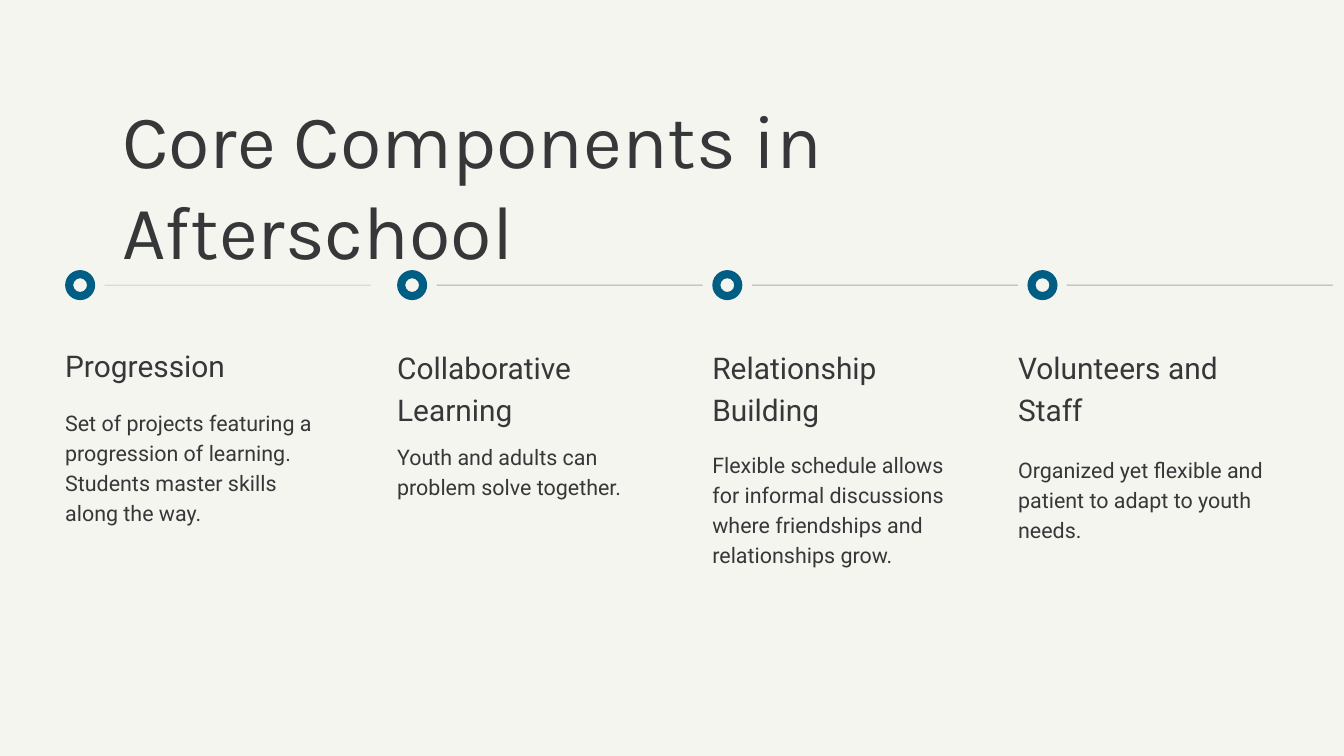
from lxml.etree import SubElement
from pptx import Presentation
from pptx.dml.color import RGBColor
from pptx.enum.shapes import MSO_CONNECTOR, MSO_SHAPE
from pptx.oxml.ns import qn
from pptx.util import Pt

PAPER = RGBColor(0xF5, 0xF5, 0xEF)
INK = RGBColor(0x36, 0x37, 0x39)
BLUE = RGBColor(0x00, 0x5D, 0x84)

TITLE = {"name": "Karla", "size": Pt(81)}
HEADING = {"name": "Roboto", "size": Pt(32)}
BODY = {"name": "Roboto", "size": Pt(23)}

AXIS_Y = 305.5
RING = 32.2
TEXT_WIDTH = 265

prs = Presentation()
prs.slide_width, prs.slide_height = Pt(1440), Pt(810)
slide = prs.slides.add_slide(prs.slide_layouts[6])
slide.background.fill.solid()
slide.background.fill.fore_color.rgb = PAPER


def add_text(text, left, top, width, height, style, leading):
    """Add a wrapping, margin-free text box; leading is in points."""
    frame = slide.shapes.add_textbox(Pt(left), Pt(top), Pt(width), Pt(height)).text_frame
    frame.word_wrap = True
    for side in ("left", "top", "right", "bottom"):
        setattr(frame, f"margin_{side}", 0)
    paragraph = frame.paragraphs[0]
    paragraph.line_spacing = Pt(leading)
    run = paragraph.add_run()
    run.text = text
    for attribute, value in style.items():
        setattr(run.font, attribute, value)
    run.font.color.rgb = INK


add_text("Core Components in Afterschool", 131, 99.4, 1150, 96.5, TITLE, 97.2)

# ring left, text left, line weight, heading (text, top, height), body (text, top, height)
components = [
    (69.8, 69.8, 0.75, ("Progression", 366.5, 43),
     ("Set of projects featuring a progression of learning. "
      "Students master skills along the way.", 434.2, 125)),
    (425.5, 425.5, 1, ("Collaborative Learning", 368, 86),
     ("Youth and adults can problem solve together.", 471.6, 61)),
    (763.2, 763.2, 1, ("Relationship Building", 368, 86),
     ("Flexible schedule allows for informal discussions "
      "where friendships and relationships grow.", 479.5, 125)),
    (1100.9, 1090.8, 1, ("Volunteers and Staff", 368, 86),
     ("Organized yet flexible and patient to adapt to youth needs.", 484.6, 93)),
]

for ring_left, text_left, weight, heading, body in components:
    line_left = ring_left + 42.3
    line = slide.shapes.add_connector(
        MSO_CONNECTOR.STRAIGHT, Pt(line_left), Pt(AXIS_Y), Pt(line_left + 285), Pt(AXIS_Y))
    line.line.width = Pt(weight)
    line.line.color.rgb = INK
    color = line.line.fill._xPr.find(f".//{qn('a:srgbClr')}")
    SubElement(color, qn("a:alpha"), val="39000")
    SubElement(line._element.spPr, qn("a:effectLst"))

    ring = slide.shapes.add_shape(
        MSO_SHAPE.DONUT, Pt(ring_left), Pt(AXIS_Y - RING / 2), Pt(RING), Pt(RING))
    ring.adjustments[0] = 0.27
    ring.shadow.inherit = False
    ring.fill.solid()
    ring.fill.fore_color.rgb = BLUE
    ring.line.fill.background()

    for (text, top, height), style, leading in ((heading, HEADING, 44.8), (body, BODY, 32.2)):
        add_text(text, text_left, top, TEXT_WIDTH, height, style, leading)

prs.save("out.pptx")
